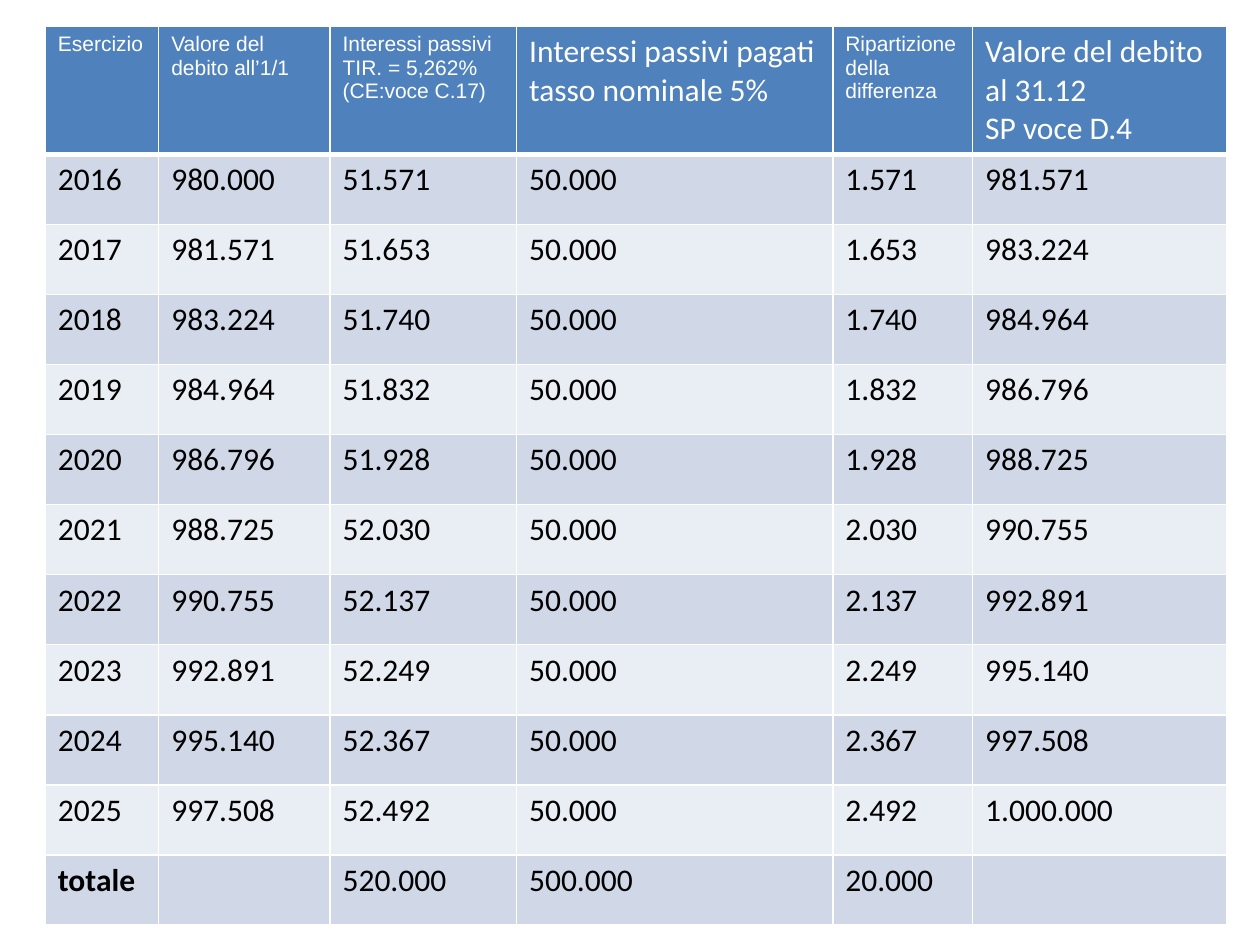
from dataclasses import dataclass

from lxml.etree import SubElement
from pptx import Presentation
from pptx.dml.color import RGBColor
from pptx.oxml.ns import qn
from pptx.util import Inches, Pt


@dataclass(frozen=True)
class Theme:
    header_fill: str = "4F81BD"
    odd_fill: str = "D0D8E8"
    even_fill: str = "E9EDF4"
    border: str = "FFFFFF"
    header_text: str = "FFFFFF"
    body_text: str = "000000"
    body_font: str = "Calibri"
    label_font: str = "Arial"
    body_size: int = 18
    label_size: int = 12
    thin: int = 1
    thick: int = 3


theme = Theme()


def write_text(cell, text, *, font, size, color, bold=False):
    """Fill a cell with text, one paragraph for each line."""
    for number, line in enumerate(text.split("\n")):
        frame = cell.text_frame
        para = frame.paragraphs[0] if number == 0 else frame.add_paragraph()
        para.font.size = Pt(size)
        if line:
            span = para.add_run()
            span.text = line
            span.font.name = font
            span.font.size = Pt(size)
            span.font.bold = bold
            span.font.color.rgb = RGBColor.from_string(color)


def draw_borders(cell, **widths):
    """Draw the cell's edges; widths in points, keyed by L, R, T, B in that order."""
    properties = cell._tc.get_or_add_tcPr()
    for side, width in widths.items():
        line = SubElement(properties, qn(f"a:ln{side}"), w=str(Pt(width)))
        fill = SubElement(line, qn("a:solidFill"))
        SubElement(fill, qn("a:srgbClr"), val=theme.border)


# Header texts, with the columns set in the larger body type
headers = [
    "Esercizio",
    "Valore del debito all’1/1",
    "Interessi passivi\nTIR. = 5,262%\n(CE:voce C.17)",
    "Interessi passivi pagati tasso nominale 5%",
    "Ripartizione della differenza",
    "Valore del debito al 31.12\nSP voce D.4",
]
large_headers = {3, 5}

# Interest expense, difference and closing debt of each year
schedule = [
    ("51.571", "1.571", "981.571"),
    ("51.653", "1.653", "983.224"),
    ("51.740", "1.740", "984.964"),
    ("51.832", "1.832", "986.796"),
    ("51.928", "1.928", "988.725"),
    ("52.030", "2.030", "990.755"),
    ("52.137", "2.137", "992.891"),
    ("52.249", "2.249", "995.140"),
    ("52.367", "2.367", "997.508"),
    ("52.492", "2.492", "1.000.000"),
]

# Each year opens with the debt that closed the year before
rows = [headers]
opening = "980.000"
for year, (interest, difference, closing) in enumerate(schedule, start=2016):
    rows.append([str(year), opening, interest, "50.000", difference, closing])
    opening = closing
rows.append(["totale", "", "520.000", "500.000", "20.000", ""])

# Page
deck = Presentation()
deck.slide_width, deck.slide_height = Inches(10), Inches(7.5)
page = deck.slides.add_slide(deck.slide_layouts[6])

# Table grid
column_widths = [0.9, 1.36, 1.48, 2.51, 1.11, 2.02]
row_heights = [0.99] + [0.556] * (len(rows) - 1)
table = page.shapes.add_table(
    len(rows), len(headers), Inches(0.36), Inches(0.21),
    Inches(sum(column_widths)), Inches(sum(row_heights)),
).table
for column, width in zip(table.columns, column_widths):
    column.width = Inches(width)
for row, height in zip(table.rows, row_heights):
    row.height = Inches(height)

# Cells
for row_number, texts in enumerate(rows):
    is_header = row_number == 0
    if is_header:
        fill_color = theme.header_fill
    else:
        fill_color = theme.odd_fill if row_number % 2 else theme.even_fill
    for column_number, text in enumerate(texts):
        cell = table.cell(row_number, column_number)
        is_label = is_header and column_number not in large_headers
        draw_borders(
            cell,
            L=theme.thin,
            R=theme.thin,
            T=theme.thick if row_number == 1 else theme.thin,
            B=theme.thick if is_header else theme.thin,
        )
        cell.fill.solid()
        cell.fill.fore_color.rgb = RGBColor.from_string(fill_color)
        write_text(
            cell, text,
            font=theme.label_font if is_label else theme.body_font,
            size=theme.label_size if is_label else theme.body_size,
            color=theme.header_text if is_header else theme.body_text,
            bold=text == "totale",
        )

deck.save("out.pptx")
